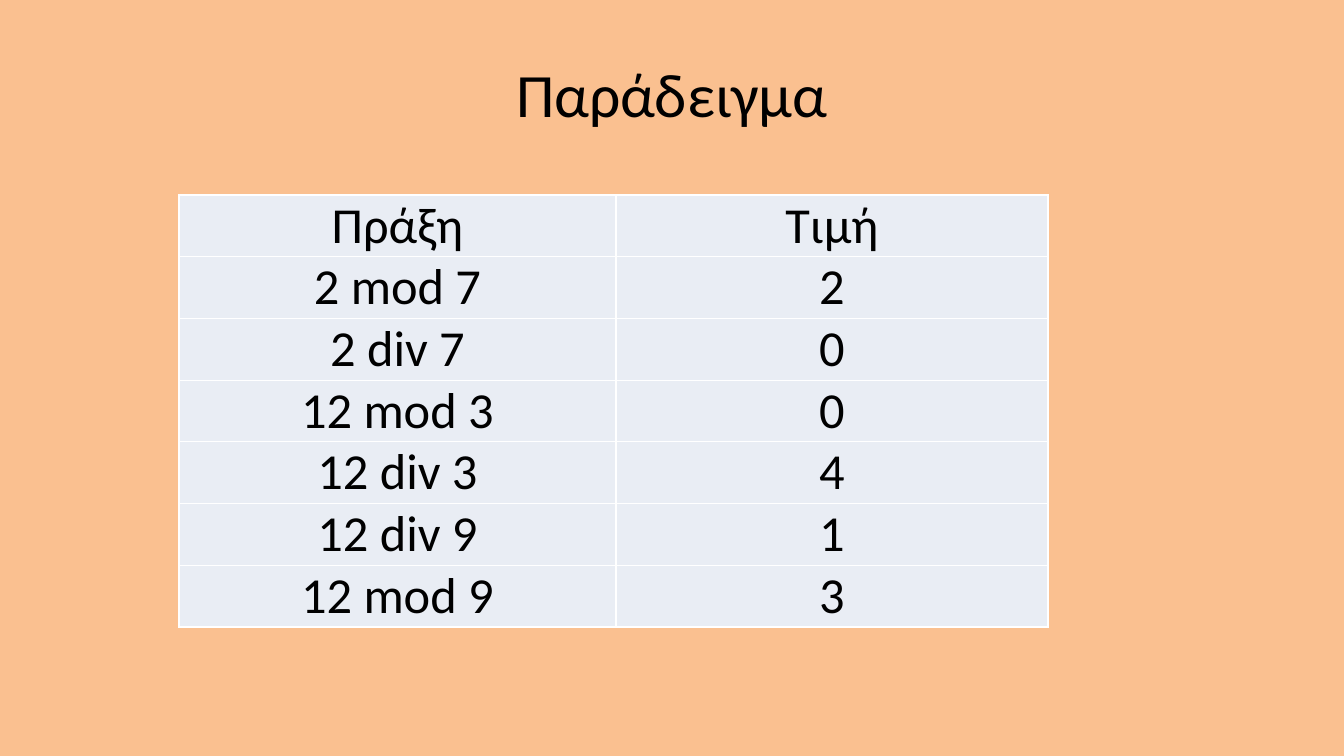
import pptx
import pptx.dml.color
import pptx.enum.text
import pptx.oxml
import pptx.oxml.ns
import pptx.util

EMU_PER_PX = 914400 / 100.8
COLORS = {"background": "FAC090", "cell": "E9EDF4", "border": "FFFFFF", "text": "000000"}
BORDER_PT = 1
TITLE_BOX = (67, 30, 1210, 126)
OPERATIONS_BOX = (179, 195, 869, 294)
COLUMN_WIDTHS = (437, 432)
OPERATIONS = [
    ("Πράξη", "Τιμή"),
    ("2 mod 7", "2"),
    ("2 div 7", "0"),
    ("12 mod 3", "0"),
    ("12 div 3", "4"),
    ("12 div 9", "1"),
    ("12 mod 9", "3"),
]
CENTER = pptx.enum.text.PP_ALIGN.CENTER
MIDDLE = pptx.enum.text.MSO_ANCHOR.MIDDLE


def px(length):
    return pptx.util.Emu(round(length * EMU_PER_PX))


def rgb(name):
    return pptx.dml.color.RGBColor.from_string(COLORS[name])


def apply_format(target, values):
    for attribute, value in values.items():
        setattr(target, attribute, value)


def paint(fill, color):
    fill.solid()
    fill.fore_color.rgb = rgb(color)


def write_centered(frame, text, size):
    paragraph = frame.paragraphs[0]
    paragraph.alignment = CENTER
    run = paragraph.add_run()
    run.text = text
    apply_format(run.font, {"name": "Calibri", "size": pptx.util.Pt(size), "bold": False})
    run.font.color.rgb = rgb("text")
    return paragraph


def add_borders(cell):
    properties = cell._tc.get_or_add_tcPr()
    for side in ("lnL", "lnR", "lnT", "lnB"):
        properties.append(pptx.oxml.parse_xml(
            f'<a:{side} {pptx.oxml.ns.nsdecls("a")} w="{pptx.util.Pt(BORDER_PT)}">'
            f'<a:solidFill><a:srgbClr val="{COLORS["border"]}"/></a:solidFill></a:{side}>'))


def place_title(slide, box):
    title = slide.shapes.title
    apply_format(title, dict(zip(("left", "top", "width", "height"), map(px, box))))
    apply_format(title.text_frame, {"word_wrap": True, "vertical_anchor": MIDDLE})
    write_centered(title.text_frame, "Παράδειγμα", 44)


def place_operations(slide, box):
    operations = slide.shapes.add_table(
        len(OPERATIONS), len(COLUMN_WIDTHS), *map(px, box)).table
    for column, width in zip(operations.columns, COLUMN_WIDTHS):
        column.width = px(width)
    cell_format = {"margin_left": px(7), "margin_right": px(7),
                   "margin_top": 0, "margin_bottom": 0}
    for row, entries in enumerate(OPERATIONS):
        operations.rows[row].height = px(box[3] / len(OPERATIONS))
        for column, entry in enumerate(entries):
            cell = operations.cell(row, column)
            apply_format(cell, cell_format)
            add_borders(cell)
            paint(cell.fill, "cell")
            paragraph = write_centered(cell.text_frame, entry, 36)
            paragraph.space_after = pptx.util.Pt(6)


def main():
    presentation = pptx.Presentation()
    apply_format(presentation, {"slide_width": px(1344), "slide_height": px(756)})
    slide = presentation.slides.add_slide(presentation.slide_layouts[5])
    paint(slide.background.fill, "background")

    # Heading
    place_title(slide, TITLE_BOX)

    # Operations and their values
    place_operations(slide, OPERATIONS_BOX)

    presentation.save("out.pptx")


if __name__ == "__main__":
    main()
